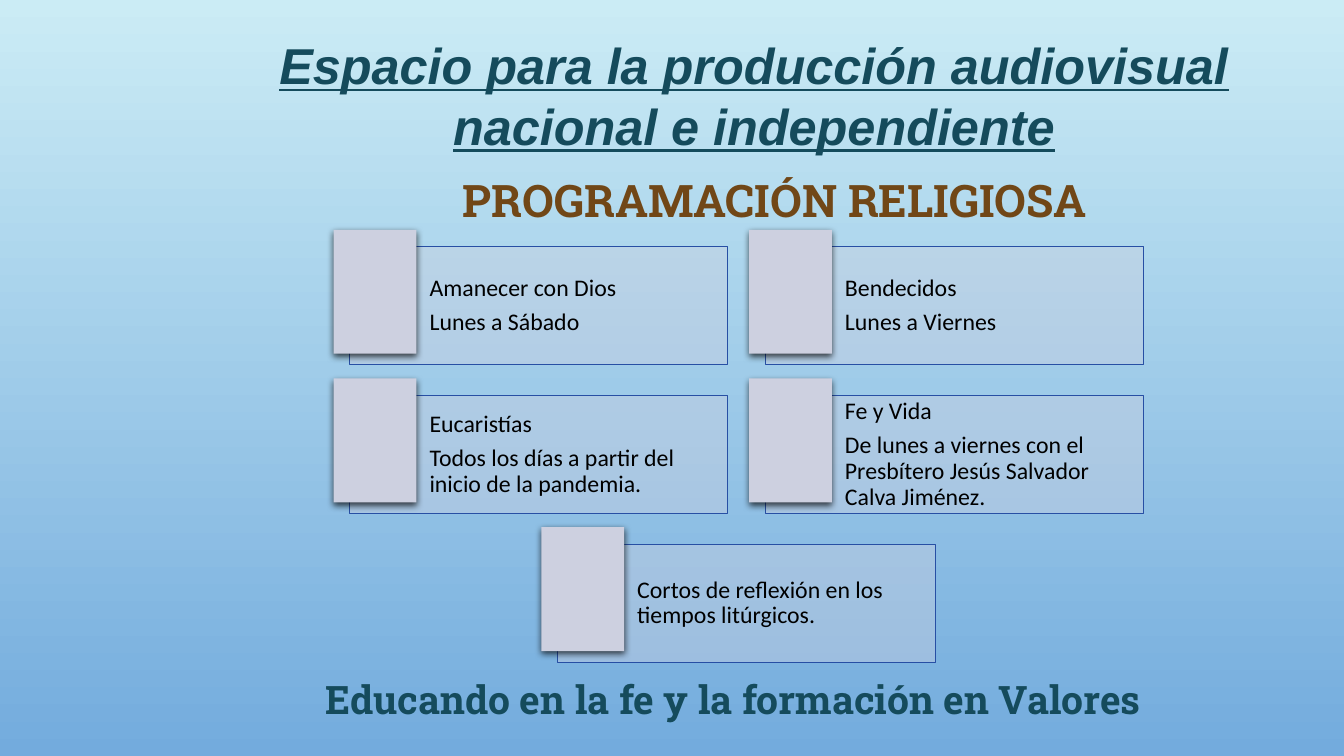
from lxml import etree
from pptx import Presentation
from pptx.dml.color import RGBColor
from pptx.enum.shapes import MSO_SHAPE as Shape
from pptx.enum.text import MSO_ANCHOR as Anchor, MSO_AUTO_SIZE as AutoSize, PP_ALIGN as Align
from pptx.oxml.ns import qn
from pptx.util import Inches, Pt

SKY = RGBColor(0xCB, 0xEC, 0xF5)
BLUE = RGBColor(0x73, 0xAB, 0xDD)
TEAL = RGBColor(0x15, 0x4B, 0x5C)
BROWN = RGBColor(0x71, 0x47, 0x17)
LAVENDER = RGBColor(0xCD, 0xD0, 0xE0)
EDGE = RGBColor(0x27, 0x4F, 0xA4)
BLACK = RGBColor(0, 0, 0)

# Card grid, in inches
GRID_LEFT, GRID_TOP = 3.31, 2.28
COLUMN, ROW = 4.12, 1.475
CARD_WIDTH, CARD_HEIGHT = 3.75, 1.17
TILE_WIDTH, TILE_HEIGHT = 0.82, 1.23
OFFSET_X, OFFSET_Y = 0.16, 0.17

# Column, row, lines of text
PROGRAMMES = [
    (0, 0, ["Amanecer con Dios", "Lunes a Sábado"]),
    (1, 0, ["Bendecidos", "Lunes a Viernes"]),
    (0, 1, ["Eucaristías", "Todos los días a partir del inicio de la pandemia."]),
    (1, 1, ["Fe y Vida",
            "De lunes a viernes con el Presbítero Jesús Salvador Calva Jiménez."]),
    (0.5, 2, ["Cortos de reflexión en los tiempos litúrgicos."]),
]


def write(frame, lines, font, size, color, align=Align.LEFT, bold=False, italic=False,
          underline=False, spacing=None, after=None):
    for index, line in enumerate(lines):
        para = frame.paragraphs[0] if index == 0 else frame.add_paragraph()
        para.alignment = align
        para.line_spacing = spacing
        para.space_after = after
        span = para.add_run()
        span.text = line
        span.font.name = font
        span.font.size = Pt(size)
        span.font.color.rgb = color
        span.font.bold = bold
        span.font.italic = italic
        span.font.underline = underline


def add_heading(page, box, text, wrap=True, **style):
    frame = page.shapes.add_textbox(*map(Inches, box)).text_frame
    frame.word_wrap = wrap
    frame.auto_size = AutoSize.SHAPE_TO_FIT_TEXT
    write(frame, [text], align=Align.CENTER, bold=True, **style)


def add_panel(page, left, top, width, height):
    panel = page.shapes.add_shape(Shape.RECTANGLE, *map(Inches, (left, top, width, height)))
    panel.shadow.inherit = False
    panel.fill.solid()
    panel.fill.fore_color.rgb = LAVENDER
    return panel


def add_shadow(shape):
    effects = shape._element.spPr.find(qn("a:effectLst"))
    shadow = etree.SubElement(effects, qn("a:outerShdw"), blurRad=str(Pt(5)),
                              dist=str(Pt(2)), dir="5400000", rotWithShape="0")
    color = etree.SubElement(shadow, qn("a:srgbClr"), val=str(BLACK))
    etree.SubElement(color, qn("a:alpha"), val="69000")


def add_card(page, left, top, lines):
    # Translucent card with the programme's text
    card = add_panel(page, left + OFFSET_X, top + OFFSET_Y, CARD_WIDTH, CARD_HEIGHT)
    tint = card._element.spPr.find(qn("a:solidFill"))[0]
    etree.SubElement(tint, qn("a:alpha"), val="40000")
    card.line.color.rgb = EDGE
    card.line.width = Pt(0.75)
    frame = card.text_frame
    frame.word_wrap = True
    frame.vertical_anchor = Anchor.MIDDLE
    frame.margin_left = Inches(0.79)
    frame.margin_top = frame.margin_right = frame.margin_bottom = Inches(0.07)
    write(frame, lines, "Calibri", 17, BLACK, spacing=0.9, after=Pt(6))

    # Raised tile at the left corner
    tile = add_panel(page, left, top, TILE_WIDTH, TILE_HEIGHT)
    tile.line.fill.background()
    add_shadow(tile)


def add_background(page):
    fill = page.background.fill
    fill.gradient()
    fill.gradient_angle = 270
    for stop, color, position in zip(fill.gradient_stops, (SKY, BLUE), (0, 1)):
        stop.color.rgb = color
        stop.position = position


def main():
    deck = Presentation()
    deck.slide_width, deck.slide_height = Inches(13.33), Inches(7.5)
    page = deck.slides.add_slide(deck.slide_layouts[6])
    add_background(page)

    # Headings and closing line
    add_heading(page, (4.05, 1.66, 7.28, 0.64), "PROGRAMACIÓN RELIGIOSA", wrap=False,
                font="Roboto Slab", size=32, color=BROWN)
    add_heading(page, (2.17, 6.65, 10.2, 0.57), "Educando en la fe y la formación en Valores",
                font="Roboto Slab", size=28, color=TEAL)

    # Programme cards
    for column, row, lines in PROGRAMMES:
        add_card(page, GRID_LEFT + column * COLUMN, GRID_TOP + row * ROW, lines)

    # Title
    add_heading(page, (2.53, 0.29, 9.9, 1.31),
                "Espacio para la producción audiovisual nacional e independiente",
                font="Arial", size=36, color=TEAL, italic=True, underline=True)
    deck.save("out.pptx")


if __name__ == "__main__":
    main()
